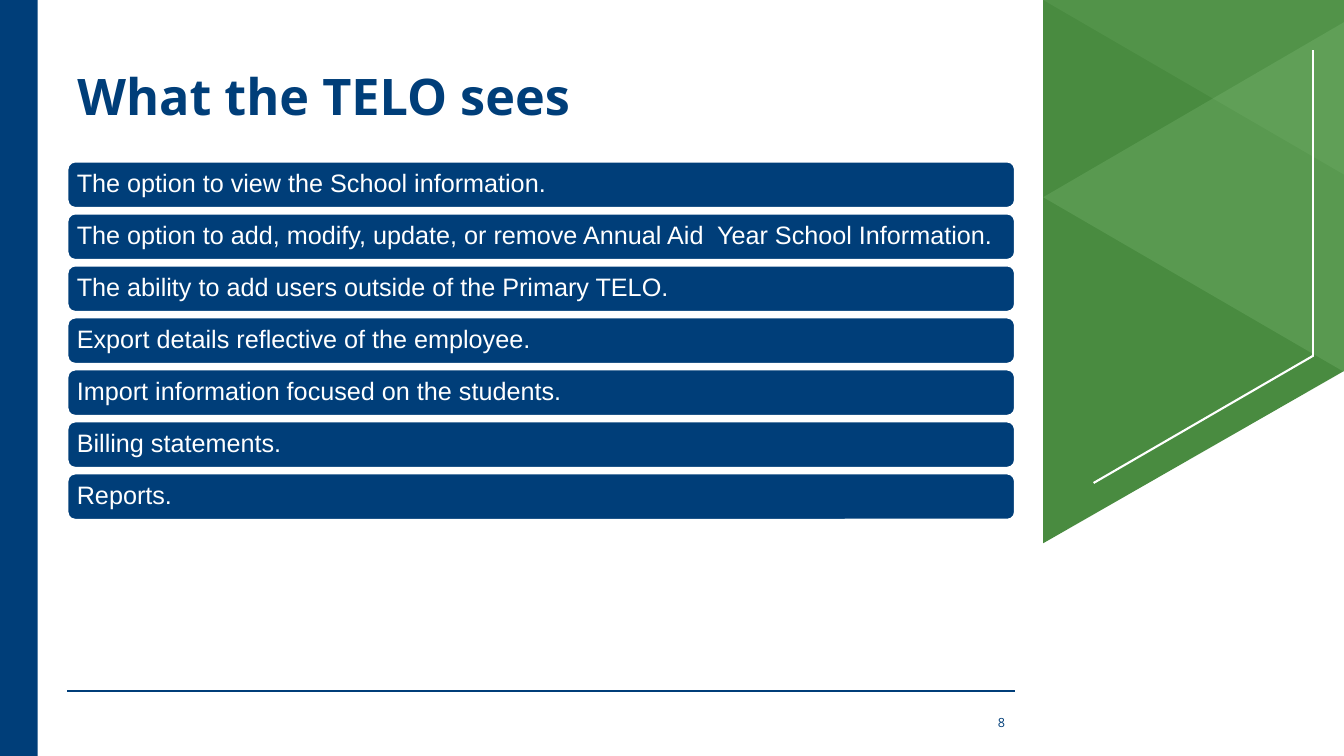
from dataclasses import dataclass

from lxml import etree
from pptx import Presentation
from pptx import util as u
from pptx.dml.color import RGBColor
from pptx.enum import shapes, text
from pptx.oxml.ns import qn


@dataclass(frozen=True)
class Theme:
    navy: RGBColor = RGBColor(0x00, 0x3E, 0x79)
    green: RGBColor = RGBColor(0x49, 0x8B, 0x40)
    light_green: RGBColor = RGBColor(0x89, 0xC5, 0x81)
    white: RGBColor = RGBColor(0xFF, 0xFF, 0xFF)
    heading_font: str = "Open Sans"
    body_font: str = "Arial"
    title_size: u.Pt = u.Pt(36)
    bar_size: u.Pt = u.Pt(18)
    number_size: u.Pt = u.Pt(9)
    line_width: u.Pt = u.Pt(1.5)


theme = Theme()


def paint(shape, color, opacity=100):
    """Give a shape a flat fill without outline or shadow."""
    shape.shadow.inherit = False
    shape.fill.solid()
    shape.fill.fore_color.rgb = color
    shape.line.fill.background()
    if opacity < 100:
        color_element = shape.fill._xPr.find(qn("a:solidFill"))[0]
        etree.SubElement(color_element, qn("a:alpha"), val=str(opacity * 1000))


def write(shape, words, frame_format, paragraph_format, font_format, color):
    """Fill a shape's text frame with one formatted paragraph."""
    frame = shape.text_frame
    paragraph = frame.paragraphs[0]
    paragraph.text = words
    for target, values in (
        (frame, {"word_wrap": True, **frame_format}),
        (paragraph, paragraph_format),
        (paragraph.font, font_format),
    ):
        for name, value in values.items():
            setattr(target, name, value)
    paragraph.font.color.rgb = color


presentation = Presentation()
presentation.slide_width = u.Cm(33.87)
presentation.slide_height = u.Cm(19.05)
slide = presentation.slides.add_slide(presentation.slide_layouts[6])

# Green panel with its lighter facets, and the navy side band
panel_left, panel_right = 26.29, 33.87
facets = [
    ([(panel_left, 0), (panel_right, 0), (panel_right, 9.35), (panel_left, 13.69)],
     theme.green, 100),
    ([(panel_left, 4.97), (panel_right, 0.56), (panel_right, 9.37)],
     theme.light_green, 25),
    ([(panel_left, 0), (panel_right, 0), (panel_right, 4.4)],
     theme.light_green, 15),
]
for corners, color, opacity in facets:
    points = [(u.Cm(x), u.Cm(y)) for x, y in corners]
    builder = slide.shapes.build_freeform(*points[0])
    builder.add_line_segments(points[1:], close=True)
    paint(builder.convert_to_shape(), color, opacity)

side_band = slide.shapes.add_shape(
    shapes.MSO_SHAPE.RECTANGLE, 0, 0, u.Cm(0.95), presentation.slide_height
)
paint(side_band, theme.navy)

# Footer rule and the bent white line on the panel
content_left, content_width = 1.7, 23.88
content_right = content_left + content_width
lines = [
    ((content_left, 17.42), (content_right, 17.42), theme.navy),
    ((27.56, 12.17), (33.1, 8.96), theme.white),
    ((33.1, 1.27), (33.1, 8.96), theme.white),
]
for start, end, color in lines:
    connector = slide.shapes.add_connector(
        shapes.MSO_CONNECTOR.STRAIGHT, *(u.Cm(value) for value in start + end)
    )
    connector.line.color.rgb = color
    connector.line.width = theme.line_width
    etree.SubElement(connector._element.spPr, qn("a:effectLst"))

# Title and slide number
title = slide.shapes.add_textbox(
    u.Cm(content_left), u.Cm(1.7), u.Cm(content_width), u.Cm(3.66)
)
write(
    title, "What the TELO sees", {}, {"line_spacing": 0.9},
    {"name": theme.heading_font, "size": theme.title_size, "bold": True}, theme.navy,
)

number_width = 1.9
number = slide.shapes.add_textbox(
    u.Cm(content_right - number_width), u.Cm(17.7), u.Cm(number_width), u.Cm(1.02)
)
write(
    number, "8", {"vertical_anchor": text.MSO_ANCHOR.MIDDLE},
    {"alignment": text.PP_ALIGN.RIGHT, "space_after": u.Pt(6)},
    {"name": theme.heading_font, "size": theme.number_size}, theme.navy,
)

# Stack of bars
bars_top, bar_height, bar_pitch = 4.07, 1.17, 1.31
bar_texts = [
    "The option to view the School information.",
    "The option to add, modify, update, or remove Annual Aid  Year School Information.",
    "The ability to add users outside of the Primary TELO.",
    "Export details reflective of the employee.",
    "Import information focused on the students.",
    "Billing statements.",
    "Reports.",
]
bar_frame = {
    "vertical_anchor": text.MSO_ANCHOR.MIDDLE,
    "margin_left": u.Cm(0.18),
    "margin_right": u.Cm(0.18),
    "margin_top": u.Cm(0.18),
    "margin_bottom": u.Cm(0.18),
}
for index, words in enumerate(bar_texts):
    bar = slide.shapes.add_shape(
        shapes.MSO_SHAPE.ROUNDED_RECTANGLE,
        u.Cm(content_left), u.Cm(bars_top + index * bar_pitch),
        u.Cm(content_width), u.Cm(bar_height),
    )
    paint(bar, theme.navy)
    bar.line.color.rgb = theme.white
    bar.line.width = theme.line_width
    write(
        bar, words, bar_frame,
        {"alignment": text.PP_ALIGN.LEFT, "line_spacing": 0.9},
        {"name": theme.body_font, "size": theme.bar_size}, theme.white,
    )

presentation.save("out.pptx")
